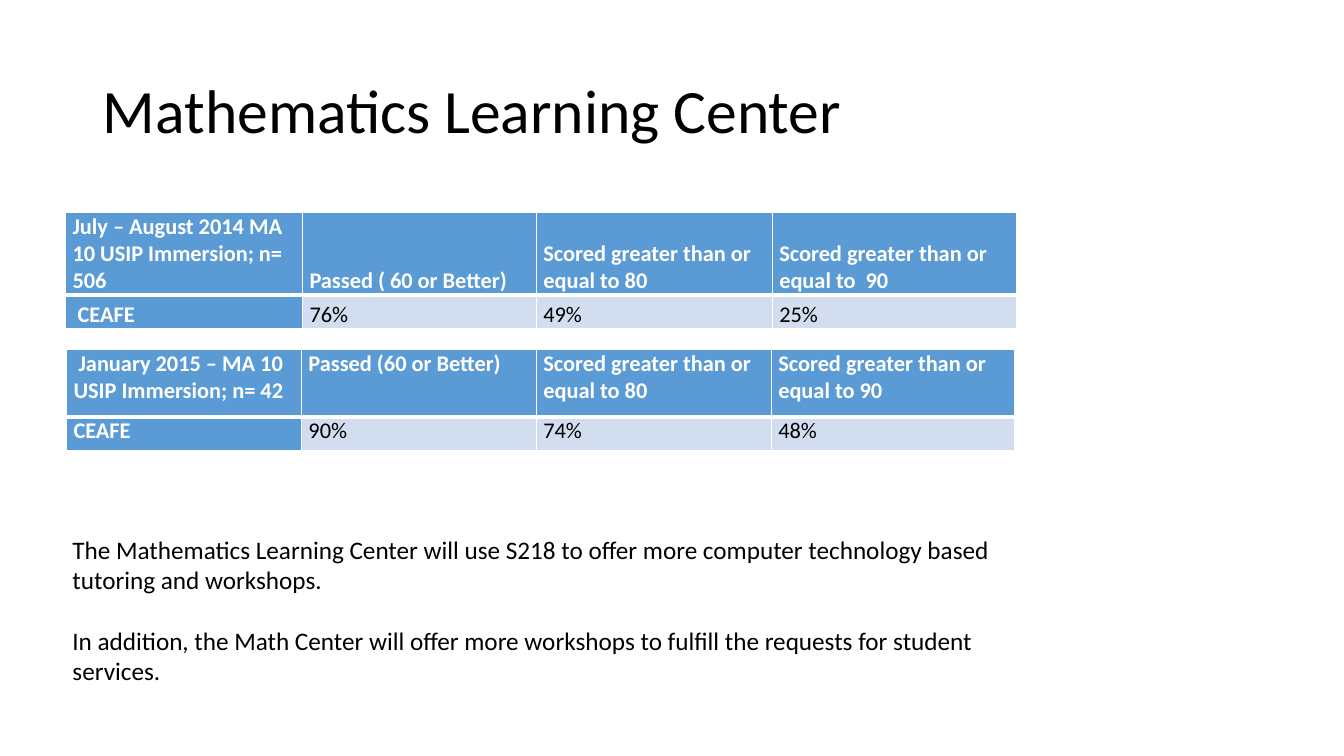
"""Build the Mathematics Learning Center results slide."""
import lxml.etree
import pptx
import pptx.dml.color
import pptx.enum.text
import pptx.oxml.ns
import pptx.util

TITLE = "Mathematics Learning Center"
TABLES = [
    {
        "box": (0.65, 2.11),
        "columns": (2.35, 2.32, 2.34, 2.42),
        "rows": (0.8, 0.33),
        "anchor": pptx.enum.text.MSO_ANCHOR.BOTTOM,
        "cells": [
            ("July – August 2014 MA 10 USIP Immersion; n= 506", "Passed ( 60 or Better)",
             "Scored greater than or equal to 80", "Scored greater than or equal to  90"),
            (" CEAFE", "76%", "49%", "25%"),
        ],
    },
    {
        "box": (0.66, 3.47),
        "columns": (2.33, 2.33, 2.33, 2.41),
        "rows": (0.67, 0.33),
        "anchor": pptx.enum.text.MSO_ANCHOR.TOP,
        "cells": [
            (" January 2015 – MA 10 USIP Immersion; n= 42", "Passed (60 or Better)",
             "Scored greater than or equal to 80", "Scored greater than or equal to 90"),
            ("CEAFE", "90%", "74%", "48%"),
        ],
    },
]
PLANS = [
    "The Mathematics Learning Center will use S218 to offer more computer technology based "
    "tutoring and workshops. ",
    "In addition, the Math Center will offer more workshops to fulfill the requests for student "
    "services.",
]
FONT = "Calibri"
BLACK, WHITE, BLUE, PALE = "000000", "FFFFFF", "5B9BD5", "D2DEEF"

inches = pptx.util.Inches
points = pptx.util.Pt


def color(value):
    return pptx.dml.color.RGBColor.from_string(value)


def add_run(paragraph, text, size, ink=BLACK, bold=False):
    run = paragraph.add_run()
    run.text = text
    run.font.name = FONT
    run.font.size = points(size)
    run.font.bold = bold
    run.font.color.rgb = color(ink)


def place(shape, left, top, width, height):
    shape.left, shape.top = inches(left), inches(top)
    shape.width, shape.height = inches(width), inches(height)


def add_borders(cell, widths):
    qn = pptx.oxml.ns.qn
    properties = cell._tc.get_or_add_tcPr()
    for side, width in widths.items():
        line = lxml.etree.SubElement(properties, qn(f"a:ln{side}"), w=str(points(width)))
        fill = lxml.etree.SubElement(line, qn("a:solidFill"))
        lxml.etree.SubElement(fill, qn("a:srgbClr"), val=WHITE)


def add_results(slide, content):
    columns, rows = content["columns"], content["rows"]
    left, top = content["box"]
    table = slide.shapes.add_table(
        len(rows), len(columns), inches(left), inches(top),
        inches(sum(columns)), inches(sum(rows))).table
    for column, width in zip(table.columns, columns):
        column.width = inches(width)
    for row, height in zip(table.rows, rows):
        row.height = inches(height)
    for row_index, texts in enumerate(content["cells"]):
        for column_index, text in enumerate(texts):
            cell = table.cell(row_index, column_index)
            header = row_index == 0
            strong = header or column_index == 0
            add_borders(cell, {"L": 1, "R": 1, "T": 1 if header else 3, "B": 3 if header else 1})
            cell.fill.solid()
            cell.fill.fore_color.rgb = color(BLUE if strong else PALE)
            cell.margin_left = cell.margin_right = inches(0.07)
            cell.margin_top = cell.margin_bottom = 0
            cell.vertical_anchor = content["anchor"]
            add_run(cell.text_frame.paragraphs[0], text, 16, WHITE if strong else BLACK, strong)


def main():
    presentation = pptx.Presentation()
    presentation.slide_width, presentation.slide_height = inches(13.33), inches(7.5)
    slide = presentation.slides.add_slide(presentation.slide_layouts[5])

    title = slide.shapes.title
    place(title, 0.92, 0.4, 11.5, 1.45)
    title.text_frame.auto_size = pptx.enum.text.MSO_AUTO_SIZE.NONE
    title.text_frame.vertical_anchor = pptx.enum.text.MSO_ANCHOR.MIDDLE
    heading = title.text_frame.paragraphs[0]
    heading.alignment = pptx.enum.text.PP_ALIGN.LEFT
    heading.line_spacing = 0.9
    add_run(heading, TITLE, 44)

    for content in TABLES:
        add_results(slide, content)

    frame = slide.shapes.add_textbox(
        inches(0.62), inches(5.25), inches(9.38), inches(1.62)).text_frame
    frame.word_wrap = True
    for index, text in enumerate(PLANS):
        paragraph = frame.add_paragraph() if index else frame.paragraphs[0]
        paragraph.space_before = points(22 if index else 0)
        add_run(paragraph, text, 18)

    presentation.save("out.pptx")


if __name__ == "__main__":
    main()
